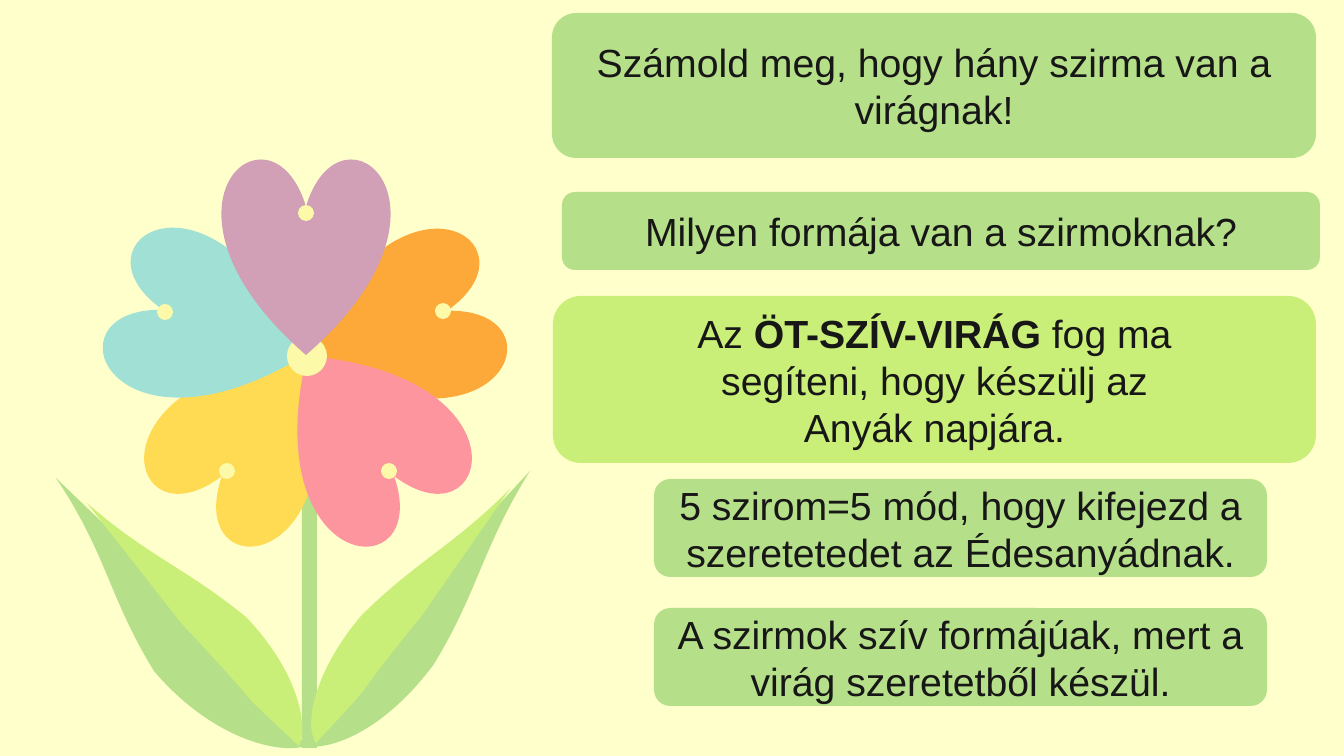
"""Build the five-heart flower slide with its text cards."""
from lxml.etree import SubElement
from pptx import Presentation
from pptx.dml.color import RGBColor
from pptx.enum.shapes import MSO_SHAPE
from pptx.enum.text import MSO_ANCHOR, PP_ALIGN
from pptx.oxml.ns import qn
from pptx.util import Emu, Pt

SLIDE_SIZE = (1344, 756)
SCALE = 12192000 / 1344
BACKGROUND, GREEN, LIME, CREAM, INK = "FFFFCC", "B6DF89", "CAEF79", "FCFAA8", "181717"
FONT, FONT_SIZE = "Arial", 28

STEM = (302, 494, 15, 254)
CORE_CENTRE, CORE_SIZE = (307, 356), (40, 40)
PETAL_SIZE, DOT_SIZE = (168, 198), (16, 16)
LOWER_PETALS = [
    (72, "FCA93A", (400, 326), (443, 311)),
    (216, "FFDA53", (251, 436), (227, 471)),
    (144, "FD959F", (365, 436), (389, 471)),
    (288, "A0E0D5", (210, 325), (165, 312)),
]
TOP_PETAL = (0, "D19FB6", (306, 256), (306, 213))

LEAVES = [
    (GREEN, (530, 471), (414, 596), [
        (318, 721), (370, 641), (302, 745),
        (327, 753), (384, 732), (434, 664),
        (478, 592), (482, 548), (530, 471)]),
    (GREEN, (56, 478), (183, 600), [
        (290, 722), (233, 643), (306, 746),
        (277, 755), (210, 737), (154, 671),
        (109, 598), (107, 554), (56, 478)]),
    (LIME, (87, 503), (182, 624), [
        (280, 728), (217, 669), (299, 746),
        (309, 726), (298, 671), (246, 617),
        (186, 568), (149, 557), (87, 503)]),
    (LIME, (510, 489), (423, 614), [
        (334, 724), (392, 661), (316, 743),
        (304, 726), (313, 673), (361, 616),
        (415, 562), (452, 547), (510, 489)]),
]

CARDS = [
    ((552, 13, 764, 145), GREEN, [["Számold meg, hogy hány szirma van a virágnak!"]]),
    ((562, 192, 758, 78), GREEN, [["Milyen formája van a szirmoknak?"]]),
    ((553, 296, 763, 167), LIME, [
        ["Az ", "ÖT-SZÍV-VIRÁG ", "fog ma"],
        ["segíteni, hogy készülj az"],
        ["Anyák napjára."]]),
    ((654, 608, 613, 98), GREEN, [["A szirmok szív formájúak, mert a virág szeretetből készül."]]),
    ((654, 479, 613, 98), GREEN, [["5 szirom=5 mód, hogy kifejezd a szeretetedet az Édesanyádnak."]]),
]
BOLD_TEXT = "ÖT-SZÍV-VIRÁG "


def px(length):
    return Emu(round(length * SCALE))


def colour(value):
    return RGBColor.from_string(value)


def paint(shape, fill):
    shape.shadow.inherit = False
    shape.fill.solid()
    shape.fill.fore_color.rgb = colour(fill)
    shape.line.fill.background()
    return shape


def add_shape(slide, kind, box, fill):
    return paint(slide.shapes.add_shape(kind, *map(px, box)), fill)


def add_centred(slide, kind, centre, size, fill):
    (x, y), (width, height) = centre, size
    return add_shape(slide, kind, (x - width / 2, y - height / 2, width, height), fill)


def add_petal(slide, angle, fill, centre, dot_centre):
    petal = add_centred(slide, MSO_SHAPE.HEART, centre, PETAL_SIZE, fill)
    petal.rotation = angle
    add_centred(slide, MSO_SHAPE.FLOWCHART_CONNECTOR, dot_centre, DOT_SIZE, CREAM)


def add_leaf(slide, fill, tip, bend, controls):
    builder = slide.shapes.build_freeform(*map(px, tip))
    builder.add_line_segments([tuple(map(px, point)) for point in [bend, *controls]], close=True)
    leaf = paint(builder.convert_to_shape(), fill)
    segments = list(leaf.element.iter(qn("a:lnTo")))[1:]
    outline = segments[0].getparent()
    for first in range(0, len(segments), 3):
        curve = SubElement(outline, qn("a:cubicBezTo"))
        segments[first].addprevious(curve)
        for segment in segments[first:first + 3]:
            curve.append(segment[0])
            outline.remove(segment)


def add_card(slide, box, fill, lines):
    frame = add_shape(slide, MSO_SHAPE.ROUNDED_RECTANGLE, box, fill).text_frame
    frame.word_wrap = True
    frame.vertical_anchor = MSO_ANCHOR.MIDDLE
    frame.text = "\n".join(texts[0] for texts in lines)
    for paragraph, texts in zip(frame.paragraphs, lines):
        paragraph.alignment = PP_ALIGN.CENTER
        for text in texts[1:]:
            paragraph.add_run().text = text
        for run in paragraph.runs:
            run.font.name = FONT
            run.font.size = Pt(FONT_SIZE)
            run.font.bold = run.text == BOLD_TEXT
            run.font.color.rgb = colour(INK)


def main():
    presentation = Presentation()
    presentation.slide_width, presentation.slide_height = map(px, SLIDE_SIZE)
    slide = presentation.slides.add_slide(presentation.slide_layouts.get_by_name("Blank"))
    slide.background.fill.solid()
    slide.background.fill.fore_color.rgb = colour(BACKGROUND)

    add_shape(slide, MSO_SHAPE.RECTANGLE, STEM, GREEN)
    for petal in LOWER_PETALS:
        add_petal(slide, *petal)
    add_centred(slide, MSO_SHAPE.FLOWCHART_CONNECTOR, CORE_CENTRE, CORE_SIZE, CREAM)
    add_petal(slide, *TOP_PETAL)
    for leaf in LEAVES:
        add_leaf(slide, *leaf)
    for card in CARDS:
        add_card(slide, *card)
    presentation.save("out.pptx")


if __name__ == "__main__":
    main()
